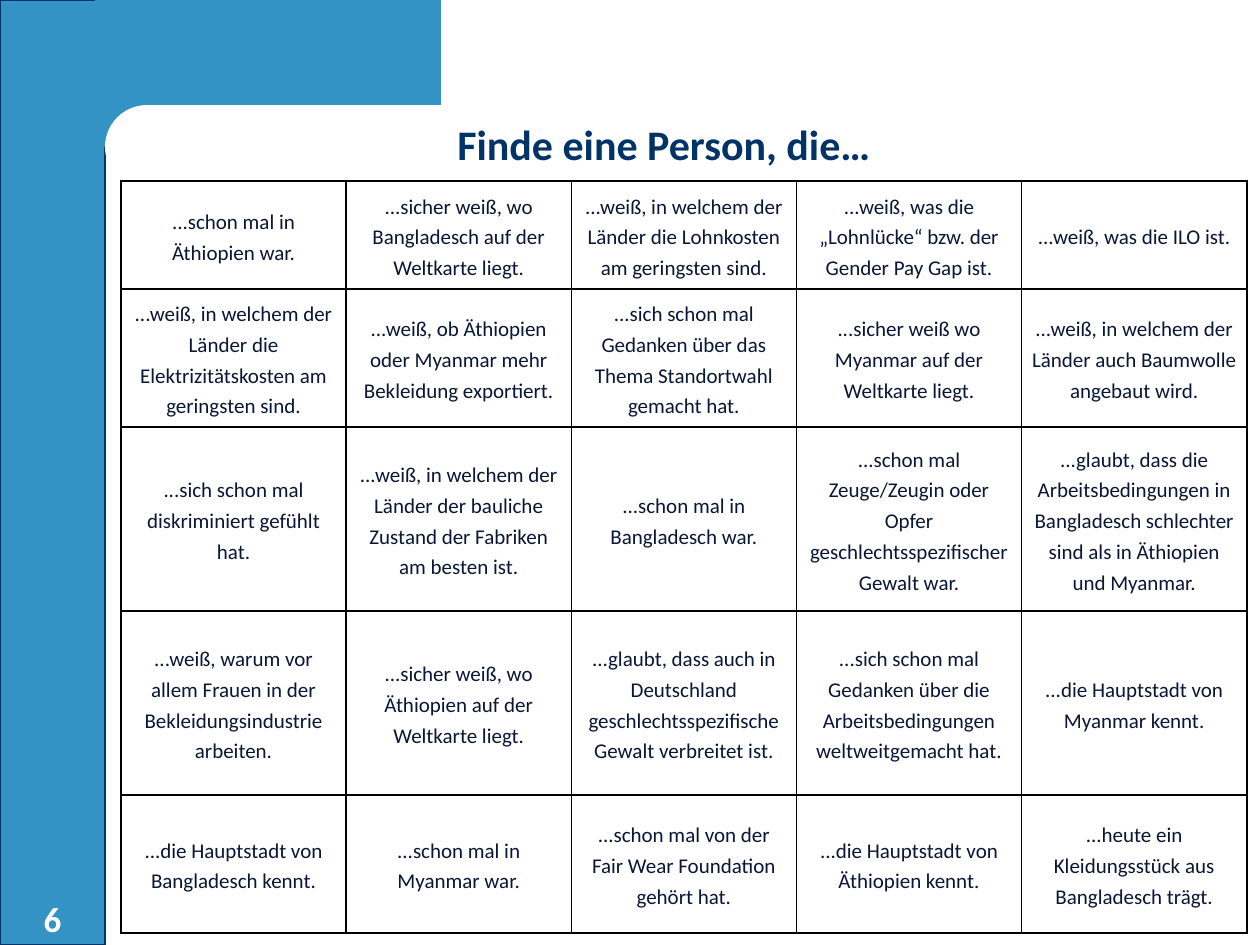
from dataclasses import dataclass

from lxml.etree import SubElement
from pptx import Presentation
from pptx.dml.color import RGBColor
from pptx.enum.shapes import MSO_SHAPE
from pptx.enum.text import MSO_ANCHOR, PP_ALIGN
from pptx.oxml.ns import qn
from pptx.util import Emu, Pt

PIXELS_PER_INCH = 126


def px(length):
    return Emu(round(length * 914400 / PIXELS_PER_INCH))


@dataclass(frozen=True)
class Theme:
    font: str = "Calibri"
    blue: str = "3493C5"
    navy: str = "003366"
    ink: str = "0A1635"
    white: str = "FFFFFF"
    black: str = "000000"
    title_size: int = 24
    number_size: int = 20
    cell_size: int = 12


BINGO_ROWS = [
    ["...schon mal in Äthiopien war.",
     "...sicher weiß, wo Bangladesch auf der Weltkarte liegt.",
     "...weiß, in welchem der Länder die Lohnkosten am geringsten sind.",
     "...weiß, was die „Lohnlücke“ bzw. der Gender Pay Gap ist.",
     "...weiß, was die ILO ist."],
    ["...weiß, in welchem der Länder die Elektrizitätskosten am geringsten sind.",
     "...weiß, ob Äthiopien oder Myanmar mehr Bekleidung exportiert.",
     "...sich schon mal Gedanken über das Thema Standortwahl gemacht hat.",
     "...sicher weiß wo Myanmar auf der Weltkarte liegt.",
     "...weiß, in welchem der Länder auch Baumwolle angebaut wird."],
    ["...sich schon mal diskriminiert gefühlt hat.",
     "...weiß, in welchem der Länder der bauliche Zustand der Fabriken am besten ist.",
     "...schon mal in Bangladesch war.",
     "...schon mal Zeuge/Zeugin oder Opfer geschlechtsspezifischer Gewalt war.",
     "...glaubt, dass die Arbeitsbedingungen in Bangladesch schlechter sind "
     "als in Äthiopien und Myanmar."],
    ["...weiß, warum vor allem Frauen in der Bekleidungsindustrie arbeiten.",
     "...sicher weiß, wo Äthiopien auf der Weltkarte liegt.",
     "...glaubt, dass auch in Deutschland geschlechtsspezifische Gewalt verbreitet ist.",
     "...sich schon mal Gedanken über die Arbeitsbedingungen weltweitgemacht hat.",
     "...die Hauptstadt von Myanmar kennt."],
    ["...die Hauptstadt von Bangladesch kennt.",
     "...schon mal in Myanmar war.",
     "...schon mal von der Fair Wear Foundation gehört hat.",
     "...die Hauptstadt von Äthiopien kennt.",
     "...heute ein Kleidungsstück aus Bangladesch trägt."],
]
ROW_HEIGHTS = [108, 138, 184, 184, 138]


class SlideBuilder:
    def __init__(self, slide, theme):
        self.slide = slide
        self.theme = theme

    def set_text(self, frame, text, size, color, bold=False, spacing=1.0):
        """Put one centred, formatted paragraph into a text frame."""
        frame.text = text
        frame.word_wrap = True
        para = frame.paragraphs[0]
        para.alignment = PP_ALIGN.CENTER
        para.line_spacing = spacing
        para.space_before = Pt(0)
        for span in para.runs:
            span.font.name = self.theme.font
            span.font.size = Pt(size)
            span.font.bold = bold
            span.font.color.rgb = RGBColor.from_string(color)

    def panel(self, kind, left, top, width, height, fill, line=None):
        shape = self.slide.shapes.add_shape(
            kind, px(left), px(top), px(width), px(height))
        shape.shadow.inherit = False
        shape.fill.solid()
        shape.fill.fore_color.rgb = RGBColor.from_string(fill)
        if line:
            shape.line.color.rgb = RGBColor.from_string(line)
            shape.line.width = Pt(0.75)
        else:
            shape.line.fill.background()
        return shape

    def title(self, text, left, top, width, height):
        title = self.slide.shapes.title
        title.left, title.top = px(left), px(top)
        title.width, title.height = px(width), px(height)
        # The placeholder comes first in the tree; raise it above the panels.
        title.element.getparent().append(title.element)
        title.text_frame.vertical_anchor = MSO_ANCHOR.BOTTOM
        self.set_text(title.text_frame, text, self.theme.title_size,
                      self.theme.navy, bold=True, spacing=0.9)

    def page_number(self, text, left, top, width, height):
        box = self.slide.shapes.add_textbox(px(left), px(top), px(width), px(height))
        box.text_frame.vertical_anchor = MSO_ANCHOR.BOTTOM
        self.set_text(box.text_frame, text, self.theme.number_size,
                      self.theme.white, bold=True)

    def borders(self, cell):
        properties = cell._tc.get_or_add_tcPr()
        for position, side in enumerate(("a:lnL", "a:lnR", "a:lnT", "a:lnB")):
            line = SubElement(properties, qn(side), w=str(Pt(1)))
            fill = SubElement(line, qn("a:solidFill"))
            SubElement(fill, qn("a:srgbClr"), val=self.theme.black)
            properties.insert(position, line)

    def table(self, rows, row_heights, left, top, width):
        columns = len(rows[0])
        table = self.slide.shapes.add_table(
            len(rows), columns, px(left), px(top), px(width), px(sum(row_heights))).table
        table.first_row = table.horz_banding = False
        for column in table.columns:
            column.width = px(width / columns)
        for row, height, texts in zip(table.rows, row_heights, rows):
            row.height = px(height)
            for cell, text in zip(row.cells, texts):
                cell.margin_left = cell.margin_right = px(9)
                cell.margin_top = cell.margin_bottom = 0
                cell.vertical_anchor = MSO_ANCHOR.MIDDLE
                cell.fill.solid()
                cell.fill.fore_color.rgb = RGBColor.from_string(self.theme.white)
                self.borders(cell)
                self.set_text(cell.text_frame, text, self.theme.cell_size,
                              self.theme.ink, spacing=1.2)


def main():
    theme = Theme()
    deck = Presentation()
    deck.slide_width, deck.slide_height = px(1260), px(945)
    title_only = deck.slide_layouts[5]
    page = SlideBuilder(deck.slides.add_slide(title_only), theme)

    page.panel(MSO_SHAPE.RECTANGLE, 0, 0, 105, 945, theme.blue, theme.navy)
    page.panel(MSO_SHAPE.RECTANGLE, 95, 0, 346, 147, theme.blue)
    corner = page.panel(MSO_SHAPE.ROUNDED_RECTANGLE, 105, 105, 703, 84, theme.white)
    corner.adjustments[0] = 0.5
    page.title("Finde eine Person, die…", 113, 88, 1102, 88)
    page.page_number("6", 0, 891, 105, 55)
    page.table(BINGO_ROWS, ROW_HEIGHTS, 121, 181, 1126)

    deck.save("out.pptx")


if __name__ == "__main__":
    main()
